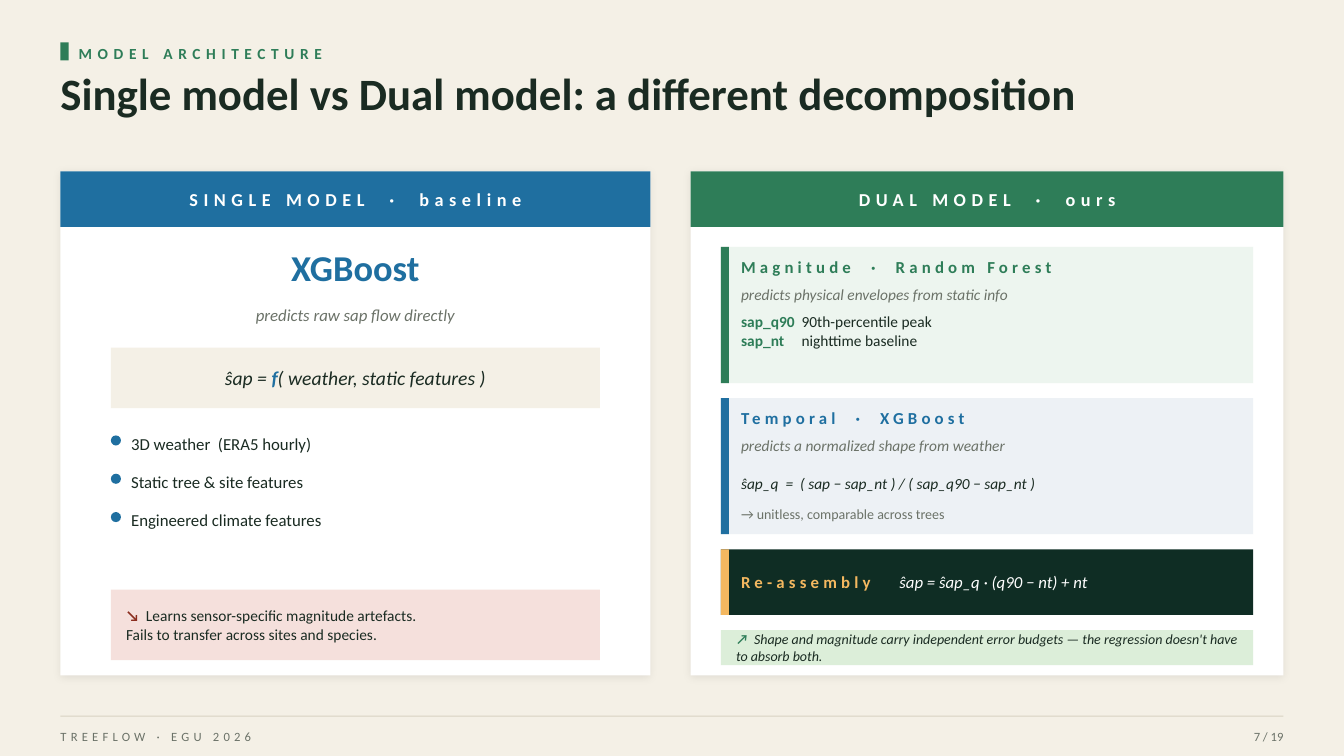
from lxml import etree
from pptx import Presentation
from pptx.dml.color import RGBColor
from pptx.enum.shapes import MSO_SHAPE
from pptx.enum.text import MSO_ANCHOR, PP_ALIGN
from pptx.oxml import parse_xml
from pptx.oxml.ns import nsdecls, qn
from pptx.util import Pt

RECTANGLE, OVAL = MSO_SHAPE.RECTANGLE, MSO_SHAPE.OVAL
TOP, MIDDLE = MSO_ANCHOR.TOP, MSO_ANCHOR.MIDDLE
LEFT, CENTER, RIGHT = PP_ALIGN.LEFT, PP_ALIGN.CENTER, PP_ALIGN.RIGHT
PX = 9144
THEME = {
    "font": "Calibri",
    "cream": "F4F0E6", "white": "FFFFFF", "ink": "1A2B22", "muted": "6B7268",
    "rule": "D8D2C2", "green": "2E7D58", "blue": "1F6FA0", "red": "8B2E1F",
    "amber": "F4B860", "forest": "0F2D24", "pale_red": "F5E0DC",
    "pale_green": "EDF5EF", "pale_blue": "EDF1F5", "mint": "DCEED9",
    "title": 32, "model": 26, "formula": 14, "header": 13,
    "body": 12, "detail": 11, "note": 10, "footer": 9,
}
SHADOW = (
    f'<a:effectLst {nsdecls("a")}><a:outerShdw blurRad="76200" dist="12700" dir="5400000" '
    'algn="bl" rotWithShape="0"><a:srgbClr val="000000"><a:alpha val="8000"/></a:srgbClr>'
    '</a:outerShdw></a:effectLst>'
)


def add_box(left, top, width, height, fill, kind=RECTANGLE):
    shape = slide.shapes.add_shape(kind, left * PX, top * PX, width * PX, height * PX)
    shape.shadow.inherit = False
    shape.fill.solid()
    shape.fill.fore_color.rgb = RGBColor.from_string(THEME[fill])
    shape.line.fill.background()
    return shape


def add_text(left, top, width, height, paragraphs, size, color, bold=None, italic=None,
             spacing=0, align=LEFT, anchor=MIDDLE, tab=0):
    box = slide.shapes.add_textbox(left * PX, top * PX, width * PX, height * PX)
    frame = box.text_frame
    frame.word_wrap = True
    frame.vertical_anchor = anchor
    frame.margin_left = frame.margin_top = frame.margin_right = frame.margin_bottom = 0
    for index, runs in enumerate(paragraphs):
        paragraph = frame.add_paragraph() if index else frame.paragraphs[0]
        paragraph.alignment = align
        if tab:
            tabs = etree.SubElement(paragraph._p.get_or_add_pPr(), qn("a:tabLst"))
            etree.SubElement(tabs, qn("a:tab"), pos=str(tab * PX), algn="l")
        paragraph.font.name = THEME["font"]
        paragraph.font.size = Pt(THEME[size])
        paragraph.font.color.rgb = RGBColor.from_string(THEME[color])
        paragraph.font.bold = bold
        paragraph.font.italic = italic
        for text, style in runs:
            run = paragraph.add_run()
            run.text = text
            if "color" in style:
                run.font.color.rgb = RGBColor.from_string(THEME[style["color"]])
            run.font.bold = style.get("bold")
            run.font.italic = style.get("italic")
            run_spacing = style.get("spacing", spacing)
            if run_spacing:
                run._r.get_or_add_rPr().set("spc", str(run_spacing * 100))


presentation = Presentation()
presentation.slide_width = 1333 * PX
presentation.slide_height = 750 * PX
slide = presentation.slides.add_slide(presentation.slide_layouts[6])
slide.background.fill.solid()
slide.background.fill.fore_color.rgb = RGBColor.from_string(THEME["cream"])

add_box(60, 42, 8, 18, "green")
add_text(78, 40, 600, 25, [[("MODEL ARCHITECTURE", {})]], "detail", "green", bold=True, spacing=4)
add_text(60, 65, 1200, 85, [[("Single model vs Dual model: a different decomposition", {})]],
         "title", "ink", bold=True, anchor=TOP)

for left, width, color, heading in [
    (60, 585, "blue", "SINGLE MODEL  ·  baseline"),
    (685, 588, "green", "DUAL MODEL  ·  ours"),
]:
    card = add_box(left, 170, width, 500, "white")
    properties = card._element.spPr
    properties.replace(properties.find(qn("a:effectLst")), parse_xml(SHADOW))
    add_box(left, 170, width, 55, color)
    add_text(left, 170, width, 55, [[(heading, {})]], "header", "white",
             bold=True, spacing=4, align=CENTER)

add_text(60, 235, 585, 60, [[("XGBoost", {})]], "model", "blue", bold=True, align=CENTER)
add_text(60, 295, 585, 35, [[("predicts raw sap flow directly", {})]], "body", "muted",
         italic=True, align=CENTER)
add_box(110, 345, 485, 60, "cream")
add_text(110, 345, 485, 60,
         [[("ŝap = ", {}), ("f", {"color": "blue", "bold": True}),
           ("( weather, static features )", {})]],
         "formula", "ink", italic=True, align=CENTER)

features = ["3D weather  (ERA5 hourly)", "Static tree & site features", "Engineered climate features"]
for index, feature in enumerate(features):
    top = 425 + 38 * index
    add_box(110, top + 7, 10, 10, "blue", OVAL)
    add_text(130, top, 485, 30, [[(feature, {})]], "body", "ink")

add_box(110, 585, 485, 70, "pale_red")
add_text(125, 585, 465, 70,
         [[("↘  ", {"color": "red", "bold": True}),
           ("Learns sensor-specific magnitude artefacts.", {})],
          [("Fails to transfer across sites and species.", {})]],
         "detail", "ink")

for top, height, fill, accent in [
    (245, 135, "pale_green", "green"),
    (395, 135, "pale_blue", "blue"),
    (545, 65, "forest", "amber"),
]:
    add_box(715, top, 528, height, fill)
    add_box(715, top, 8, height, accent)

for top, color, heading, purpose in [
    (250, "green", "Magnitude  ·  Random Forest", "predicts physical envelopes from static info"),
    (400, "blue", "Temporal  ·  XGBoost", "predicts a normalized shape from weather"),
]:
    add_text(735, top, 498, 30, [[(heading, {})]], "body", color, bold=True, spacing=3)
    add_text(735, top + 28, 498, 28, [[(purpose, {})]], "detail", "muted", italic=True)

targets = [("sap_q90", "90th-percentile peak"), ("sap_nt", "nighttime baseline")]
add_text(735, 310, 498, 65,
         [[(name, {"color": "green", "bold": True}), ("\t" + meaning, {})]
          for name, meaning in targets],
         "detail", "ink", anchor=TOP, tab=60)

add_text(735, 460, 498, 40, [[("ŝap_q  =  ( sap − sap_nt ) / ( sap_q90 − sap_nt )", {})]],
         "detail", "ink", italic=True)
add_text(735, 495, 498, 30, [[("→ unitless, comparable across trees", {})]], "note", "muted")
add_text(735, 545, 498, 65,
         [[("Re-assembly", {"color": "amber", "bold": True, "spacing": 3}),
           ("\tŝap = ŝap_q · (q90 − nt) + nt", {"italic": True})]],
         "body", "white", tab=157)

add_box(715, 625, 528, 35, "mint")
add_text(730, 625, 498, 35,
         [[("↗  ", {"color": "green", "bold": True}),
           ("Shape and magnitude carry independent error budgets — "
            "the regression doesn't have to absorb both.", {})]],
         "note", "ink", italic=True)

add_box(60, 710, 1213, 1, "rule")
add_text(60, 718, 600, 25, [[("TREEFLOW · EGU 2026", {})]], "footer", "muted", spacing=3)
add_text(1113, 718, 160, 25, [[("7 / 19", {})]], "footer", "muted", align=RIGHT)

presentation.save("out.pptx")
